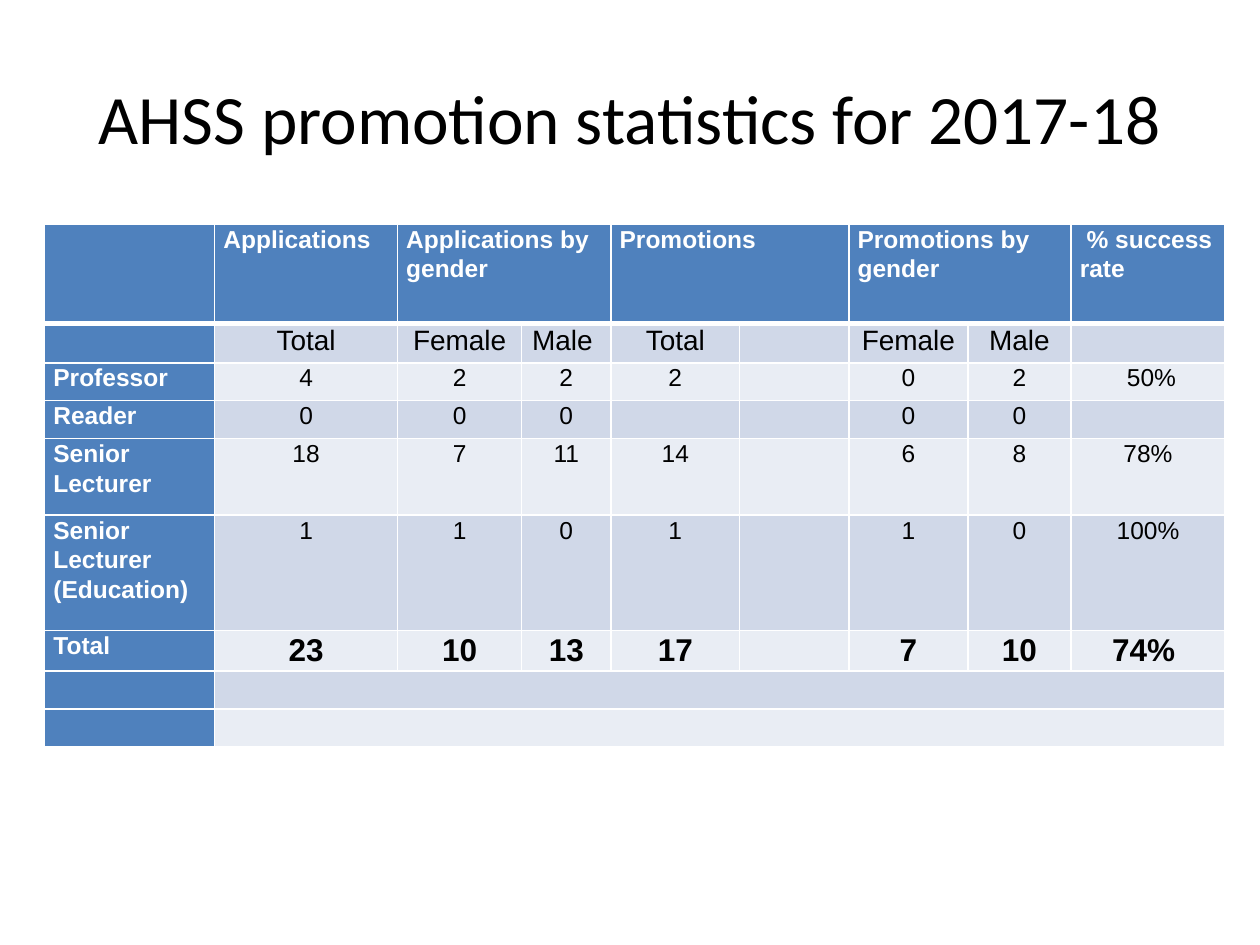
from lxml import etree
from pptx import Presentation
from pptx.dml.color import RGBColor
from pptx.enum import text
from pptx.oxml import ns
from pptx.util import Pt

BLUE = RGBColor(0x4F, 0x81, 0xBD)
BAND_DARK = RGBColor(0xD0, 0xD8, 0xE8)
BAND_LIGHT = RGBColor(0xE9, 0xED, 0xF4)
WHITE = RGBColor(0xFF, 0xFF, 0xFF)
BLACK = RGBColor(0, 0, 0)

COL_WIDTHS = [97.2, 104.4, 71, 51, 73.6, 62.4, 68, 59, 88]
ROW_HEIGHTS = [56.7, 22.4, 21.4, 21.4, 43.8, 66, 21.6, 21.4, 21.4]
ROWS = [
    ["", "Applications", "Applications by gender", "", "Promotions", "",
     "Promotions by gender", "", " % success rate"],
    ["", "Total", "Female", "Male ", "Total", "", "Female", "Male", ""],
    ["Professor", "4", "2", "2", "2", "", "0", "2", " 50%"],
    ["Reader", "0", "0", "0", "", "", "0", "0", ""],
    ["Senior Lecturer", "18", "7", "11", "14", "", "6", "8", "78%"],
    ["Senior Lecturer (Education)", "1", "1", "0", "1", "", "1", "0", "100%"],
    ["Total", "23", "10", "13", "17", "", "7", "10", "74% "],
    [""] * 9,
    [""] * 9,
]
MERGES = [(0, 2, 3), (0, 4, 5), (0, 6, 7), (7, 1, 8), (8, 1, 8)]
SUBHEAD, TOTALS = 1, 6
BODY_SIZES = {SUBHEAD: 16, TOTALS: 18}


def add_run(p, words, font, size, color, bold=False):
    r = p.add_run()
    r.text = words
    r.font.name = font
    r.font.size = Pt(size)
    r.font.bold = bold
    r.font.color.rgb = color


def add_border(cell, side, width):
    """Draw a white line on one side: L, R, T or B."""
    tc_pr = cell._tc.get_or_add_tcPr()
    ln = etree.SubElement(tc_pr, ns.qn(f"a:ln{side}"), w=str(Pt(width)))
    fill = etree.SubElement(ln, ns.qn("a:solidFill"))
    etree.SubElement(fill, ns.qn("a:srgbClr"), val=str(WHITE))


prs = Presentation()
prs.slide_width, prs.slide_height = Pt(720), Pt(540)
s = prs.slides.add_slide(prs.slide_layouts[6])

# Title
tf = s.shapes.add_textbox(Pt(36), Pt(21.6), Pt(648), Pt(90)).text_frame
tf.word_wrap = True
tf.vertical_anchor = text.MSO_ANCHOR.MIDDLE
p = tf.paragraphs[0]
p.alignment = text.PP_ALIGN.CENTER
add_run(p, "AHSS promotion statistics for 2017-18", "Calibri", 39.6, BLACK)

# Promotion table
table = s.shapes.add_table(len(ROWS), len(COL_WIDTHS), Pt(25.5), Pt(128.2),
                           Pt(sum(COL_WIDTHS)), Pt(sum(ROW_HEIGHTS))).table
for col, width in zip(table.columns, COL_WIDTHS):
    col.width = Pt(width)
for row, height in zip(table.rows, ROW_HEIGHTS):
    row.height = Pt(height)

for i, row in enumerate(ROWS):
    for j, words in enumerate(row):
        cell = table.cell(i, j)
        heading = i == 0 or j == 0
        cell.margin_left = cell.margin_right = Pt(5)
        cell.margin_top = cell.margin_bottom = 0
        for side in "LRTB":
            under_header = (i, side) in ((0, "B"), (1, "T"))
            add_border(cell, side, 3 if under_header else 1)
        cell.fill.solid()
        band = BAND_DARK if i % 2 else BAND_LIGHT
        cell.fill.fore_color.rgb = BLUE if heading else band
        if words:
            p = cell.text_frame.paragraphs[0]
            p.line_spacing = 1.07
            if heading:
                add_run(p, words, "Arial", 14, WHITE, True)
            else:
                p.alignment = text.PP_ALIGN.CENTER
                add_run(p, words, "Arial", BODY_SIZES.get(i, 14), BLACK, i == TOTALS)

for i, first, last in MERGES:
    table.cell(i, first).merge(table.cell(i, last))

prs.save("out.pptx")
